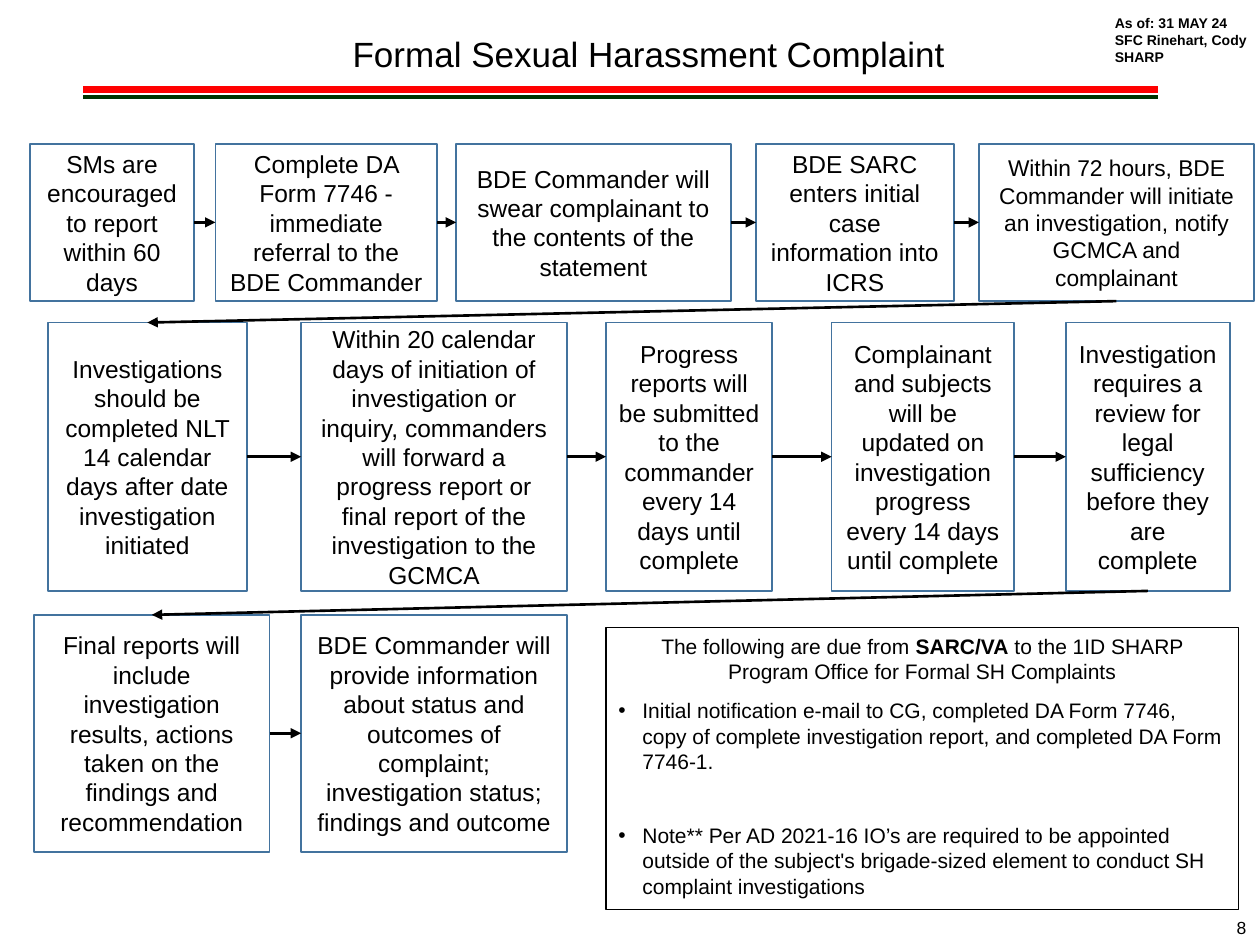
from itertools import pairwise

from lxml.etree import SubElement
from pptx import Presentation
from pptx.dml.color import RGBColor
from pptx.enum.shapes import MSO_CONNECTOR, MSO_SHAPE
from pptx.enum.text import MSO_ANCHOR as Anchor, PP_ALIGN as Align
from pptx.oxml.ns import qn
from pptx.util import Inches, Pt

BLACK = RGBColor(0x00, 0x00, 0x00)
WHITE = RGBColor(0xFF, 0xFF, 0xFF)
BLUE = RGBColor(0x43, 0x73, 0x9E)
RED = RGBColor(0xFF, 0x00, 0x00)
GREEN = RGBColor(0x00, 0x33, 0x00)

presentation = Presentation()
presentation.slide_width = Inches(10)
presentation.slide_height = Inches(7.5)
COLUMN = presentation.slide_width / 100
ROW = presentation.slide_height / 75
slide = presentation.slides.add_slide(presentation.slide_layouts[6])
shapes = slide.shapes


def place(left, top, width, height):
    return [round(left * COLUMN), round(top * ROW), round(width * COLUMN), round(height * ROW)]


def write(shape, paragraphs, size=14, bold=False, align=Align.CENTER,
          anchor=Anchor.TOP, wrap=True, bullets=(), gaps=()):
    frame = shape.text_frame
    frame.word_wrap = wrap
    frame.vertical_anchor = anchor
    for index, runs in enumerate(paragraphs):
        paragraph = frame.paragraphs[0] if index == 0 else frame.add_paragraph()
        paragraph.alignment = align
        if index in bullets:
            paragraph.alignment = Align.LEFT
            properties = paragraph._p.get_or_add_pPr()
            properties.set("marL", str(Inches(0.19)))
            properties.set("indent", str(-Inches(0.19)))
            SubElement(properties, qn("a:buFont"), typeface="Arial")
            SubElement(properties, qn("a:buChar"), char="•")
        if gaps and index:
            paragraph.space_before = Pt(gaps[index])
        for text, emphasis in ([(runs, bold)] if isinstance(runs, str) else runs):
            run = paragraph.add_run()
            run.text = text
            run.font.name = "Arial"
            run.font.size = Pt(size)
            run.font.bold = emphasis
            run.font.color.rgb = BLACK


flow = [
    (11.4, 12.5, [
        (2.4, 13, 14, ["SMs are encouraged to report within 60 days"]),
        (17.1, 17.6, 14, ["Complete DA Form 7746 -", "immediate referral to the BDE Commander"]),
        (36.2, 21.8, 14, ["BDE Commander will swear complainant to the contents of the statement"]),
        (60, 15.7, 14, ["BDE SARC enters initial case information into ICRS"]),
        (77.7, 21.8, 13, ["Within 72 hours, BDE Commander will initiate an investigation, "
                          "notify GCMCA and complainant"]),
    ]),
    (25.6, 21.3, [
        (3.8, 15.8, 14, ["Investigations should be completed NLT 14 calendar days "
                         "after date investigation initiated"]),
        (23.9, 21.1, 14, ["Within 20 calendar days of initiation of investigation or inquiry, "
                          "commanders will forward a progress report or final report "
                          "of the investigation to the GCMCA"]),
        (48.1, 13.2, 14, ["Progress reports will be submitted to the commander "
                          "every 14 days until complete"]),
        (66, 14.5, 14, ["Complainant and subjects will be updated on investigation progress "
                        "every 14 days until complete"]),
        (84.6, 13, 14, ["Investigation requires a review for legal sufficiency "
                        "before they are complete"]),
    ]),
    (48.8, 18.8, [
        (2.7, 18.7, 14, ["Final reports will include investigation results, "
                         "actions taken on the findings and recommendation"]),
        (23.9, 21.1, 14, ["BDE Commander will provide information about status and outcomes "
                          "of complaint; investigation status; findings and outcome"]),
    ]),
]

steps = []
for top, height, boxes in flow:
    for left, width, size, paragraphs in boxes:
        box = shapes.add_shape(MSO_SHAPE.RECTANGLE, *place(left, top, width, height))
        box.shadow.inherit = False
        box.fill.solid()
        box.fill.fore_color.rgb = WHITE
        box.line.color.rgb = BLUE
        box.line.width = Pt(1)
        write(box, paragraphs, size=size, anchor=Anchor.MIDDLE)
        steps.append(box)

lines = []
for height, color, weight in [(7.1, RED, 4), (7.7, GREEN, 2.25)]:
    rule = shapes.add_connector(MSO_CONNECTOR.STRAIGHT, *place(6.6, height, 91.9, height))
    lines.append((rule, color, weight, False))

TOP, LEFT, BOTTOM, RIGHT = range(4)
for source, target in pairwise(steps):
    same_row = source.top == target.top
    arrow = shapes.add_connector(MSO_CONNECTOR.STRAIGHT, 0, 0, 0, 0)
    arrow.begin_connect(source, RIGHT if same_row else BOTTOM)
    arrow.end_connect(target, LEFT if same_row else TOP)
    lines.append((arrow, BLACK, 1.5, True))

for line, color, weight, pointed in lines:
    line.line.color.rgb = color
    line.line.width = Pt(weight)
    if pointed:
        SubElement(line.line._get_or_add_ln(), qn("a:tailEnd"), type="triangle")
    SubElement(line._element.spPr, qn("a:effectLst"))

due = shapes.add_shape(MSO_SHAPE.RECTANGLE, *place(48.1, 49.8, 50.2, 22.4))
due.shadow.inherit = False
due.fill.background()
due.line.color.rgb = BLACK
due.line.width = Pt(1)
write(due, [
    [("The following are due from ", False), ("SARC/VA", True),
     (" to the 1ID SHARP Program Office for Formal SH Complaints", False)],
    "Initial notification e-mail to CG, completed DA Form 7746, copy of complete "
    "investigation report, and completed DA Form 7746-1.",
    "Note** Per AD 2021-16 IO’s are required to be appointed outside of the subject's "
    "brigade-sized element to conduct SH complaint investigations",
], size=12, bullets=(1, 2), gaps=(0, 8, 28))

title = shapes.add_textbox(*place(1.5, 2.1, 100, 4.4))
write(title, ["Formal Sexual Harassment Complaint"], size=20)

status = shapes.add_textbox(*place(87.5, 0.7, 12.6, 5))
write(status, ["As of: 31 MAY 24", "SFC Rinehart, Cody", "SHARP"],
      size=8, bold=True, align=Align.LEFT, wrap=False)

number = shapes.add_textbox(*place(94.3, 72.3, 5.6, 2.7))
write(number, ["8"], size=10, align=Align.RIGHT)

presentation.save("out.pptx")
